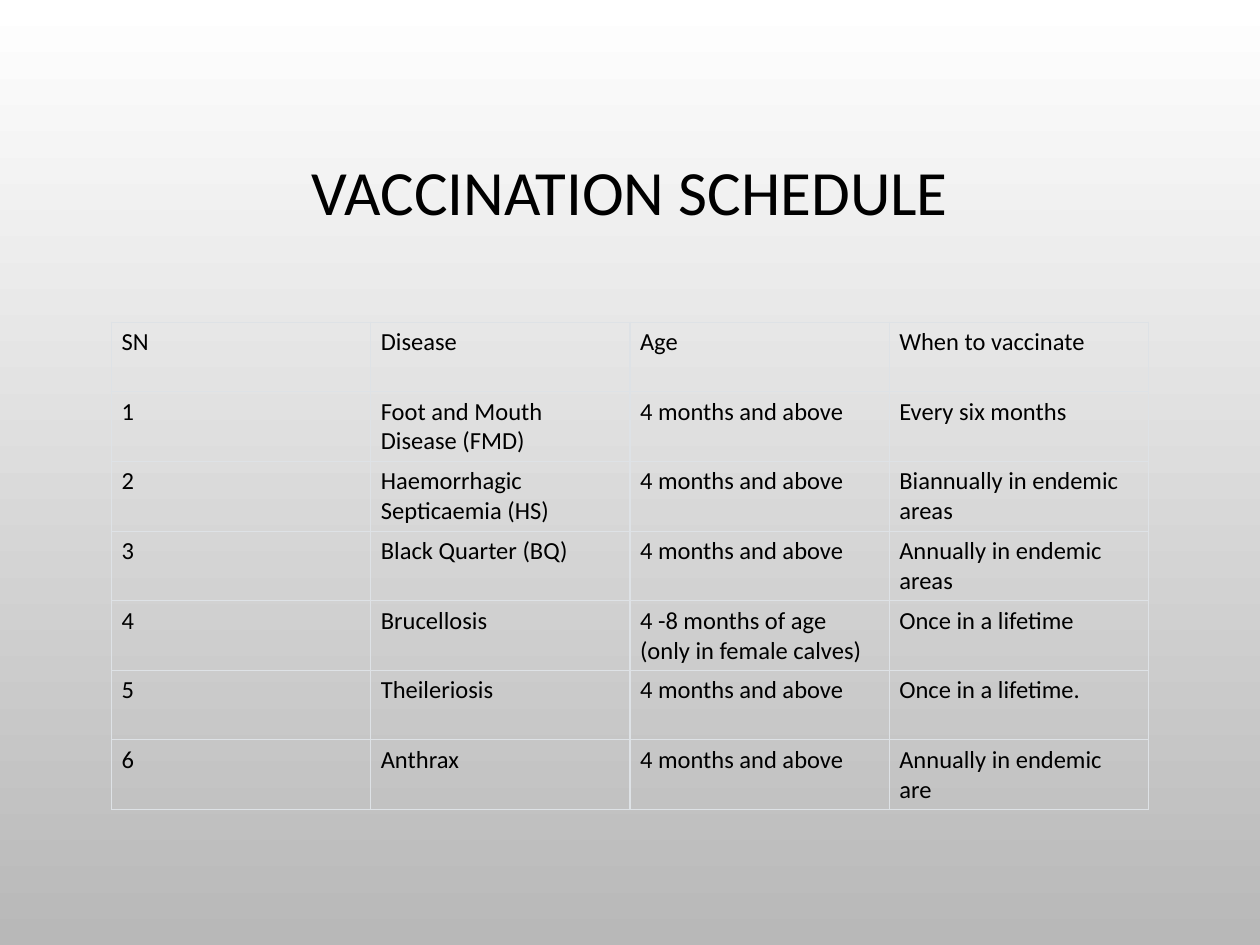
from dataclasses import astuple, dataclass

from lxml import etree
from pptx import Presentation
from pptx.dml.color import RGBColor
from pptx.enum.text import MSO_ANCHOR, PP_ALIGN
from pptx.oxml.ns import qn
from pptx.slide import Slide
from pptx.table import _Cell
from pptx.text.text import _Paragraph
from pptx.util import Inches, Pt

CENTER = PP_ALIGN.CENTER
MIDDLE = MSO_ANCHOR.MIDDLE
FONT = "Calibri"
COLORS = {"top": "FFFFFF", "bottom": "B8B8B8", "text": "000000", "border": "DEE2E6"}
SLIDE_W, SLIDE_H = Inches(10), Inches(7.5)
TABLE_W = Inches(8.23)
ROW_H = Inches(0.55)
TITLE_W = Inches(8.5)


@dataclass
class Vaccination:
    number: str
    disease: str
    age: str
    timing: str


USUAL_AGE = "4 months and above"
SCHEDULE = [
    Vaccination("SN", "Disease", "Age", "When to vaccinate"),
    Vaccination("1", "Foot and Mouth Disease (FMD)", USUAL_AGE, "Every six months"),
    Vaccination("2", "Haemorrhagic Septicaemia (HS)", USUAL_AGE, "Biannually in endemic areas"),
    Vaccination("3", "Black Quarter (BQ)", USUAL_AGE, "Annually in endemic areas"),
    Vaccination("4", "Brucellosis", "4 -8 months of age (only in female calves)", "Once in a lifetime"),
    Vaccination("5", "Theileriosis", USUAL_AGE, "Once in a lifetime."),
    Vaccination("6", "Anthrax", USUAL_AGE, "Annually in endemic are"),
]


def format_runs(paragraph: _Paragraph, size: float) -> None:
    for run in paragraph.runs:
        run.font.name = FONT
        run.font.size = Pt(size)
        run.font.color.rgb = RGBColor.from_string(COLORS["text"])


def paint_background(slide: Slide) -> None:
    fill = slide.background.fill
    fill.gradient()
    fill.gradient_angle = 270
    for stop, shade in zip(fill.gradient_stops, ("top", "bottom")):
        stop.color.rgb = RGBColor.from_string(COLORS[shade])


def add_title(slide: Slide, wording: str) -> None:
    title = slide.shapes.title
    title.left, title.top = (SLIDE_W - TITLE_W) // 2, Inches(0.68)
    title.width, title.height = TITLE_W, Inches(1.74)
    title.text_frame.text = wording
    title.text_frame.vertical_anchor = MIDDLE
    heading = title.text_frame.paragraphs[0]
    heading.alignment = CENTER
    heading.line_spacing = 0.9
    format_runs(heading, 36)


def draw_borders(cell: _Cell) -> None:
    properties = cell._tc.get_or_add_tcPr()
    for position, side in enumerate(("lnL", "lnR", "lnT", "lnB")):
        line = etree.Element(qn(f"a:{side}"), w=str(Pt(0.75)))
        solid = etree.SubElement(line, qn("a:solidFill"))
        etree.SubElement(solid, qn("a:srgbClr"), val=COLORS["border"])
        properties.insert(position, line)


def fill_cell(cell: _Cell, wording: str) -> None:
    cell.text_frame.text = wording
    cell.margin_left = cell.margin_right = Inches(0.08)
    cell.margin_top = cell.margin_bottom = Inches(0.04)
    cell.fill.background()
    draw_borders(cell)
    format_runs(cell.text_frame.paragraphs[0], 14)


def add_schedule(slide: Slide, schedule: list[Vaccination]) -> None:
    rows = [astuple(vaccination) for vaccination in schedule]
    table = slide.shapes.add_table(
        len(rows), len(rows[0]), (SLIDE_W - TABLE_W) // 2, Inches(2.56),
        TABLE_W, ROW_H * len(rows),
    ).table
    table.first_row = table.horz_banding = False
    for row, wordings in zip(table.rows, rows):
        for cell, wording in zip(row.cells, wordings):
            fill_cell(cell, wording)


def main() -> None:
    deck = Presentation()
    deck.slide_width, deck.slide_height = SLIDE_W, SLIDE_H
    slide = deck.slides.add_slide(deck.slide_layouts[5])
    paint_background(slide)
    add_title(slide, "VACCINATION SCHEDULE")
    add_schedule(slide, SCHEDULE)
    deck.save("out.pptx")


if __name__ == "__main__":
    main()
